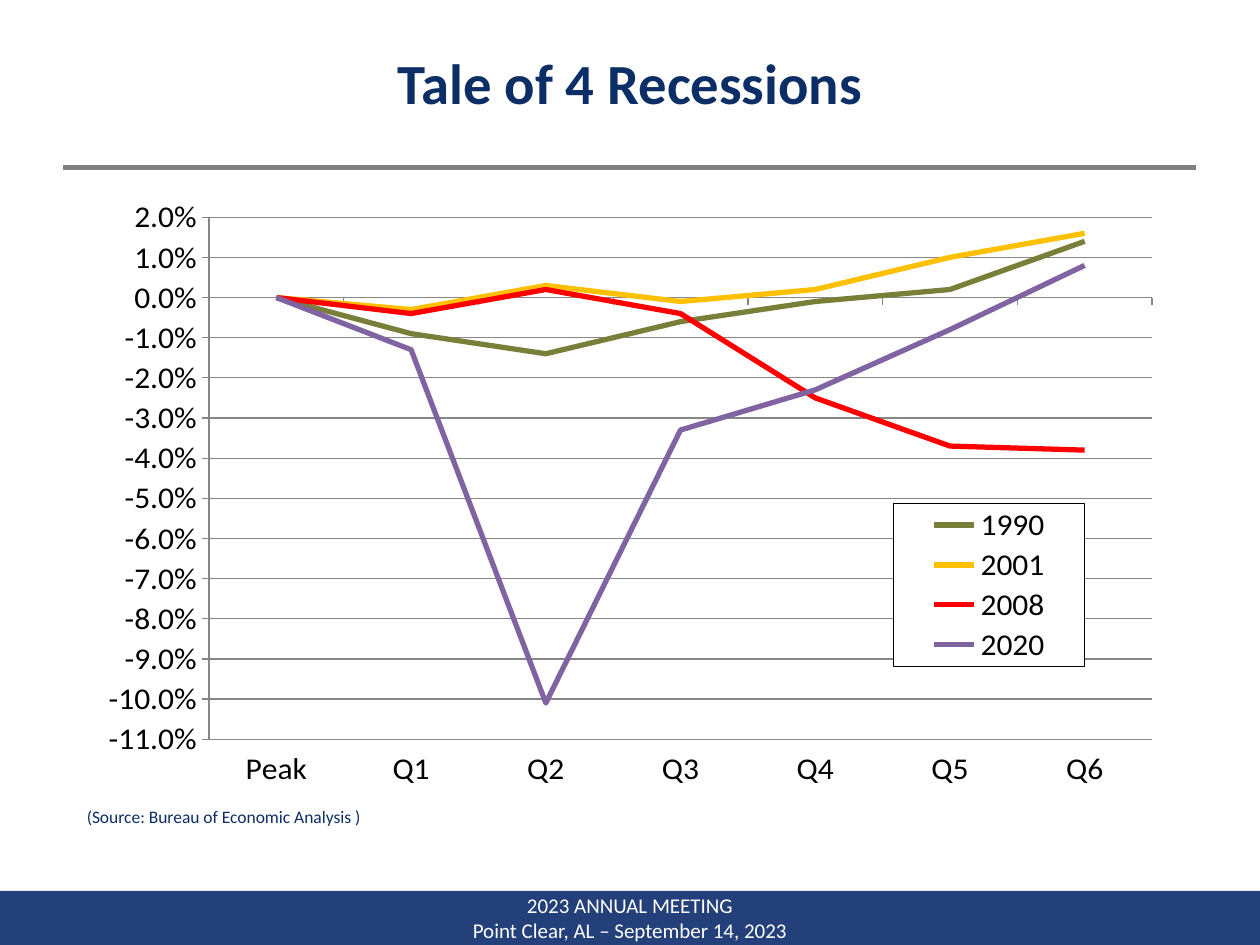
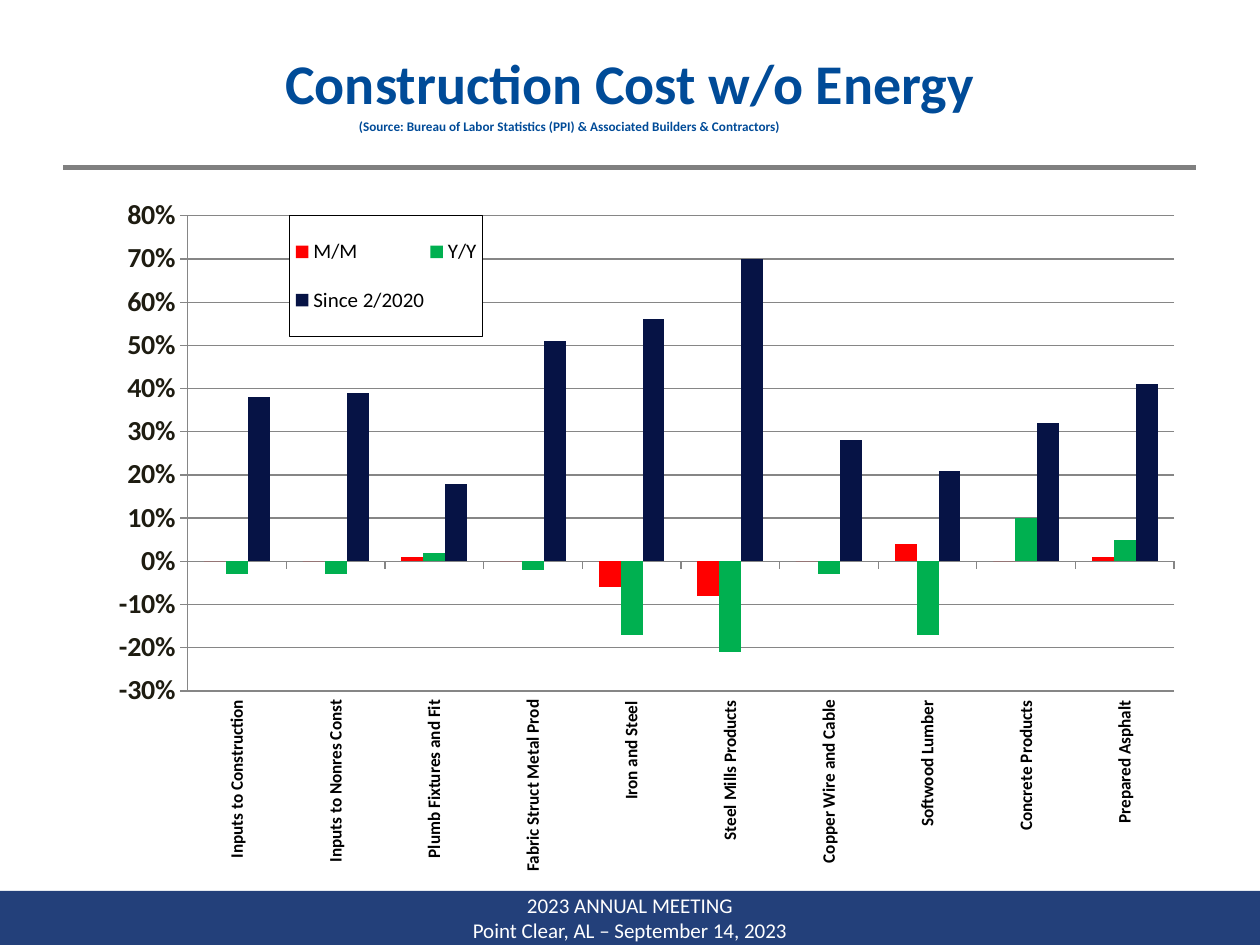
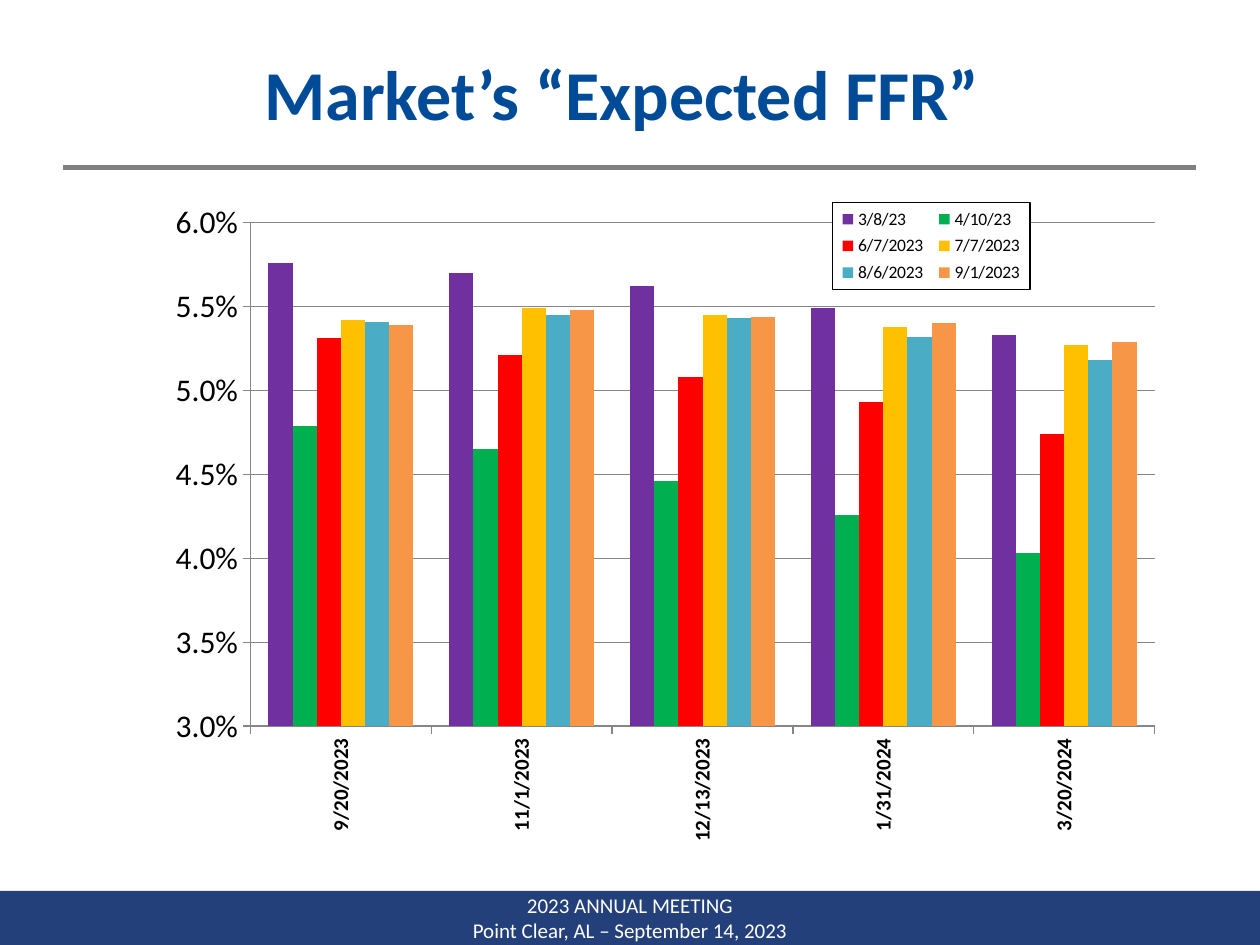
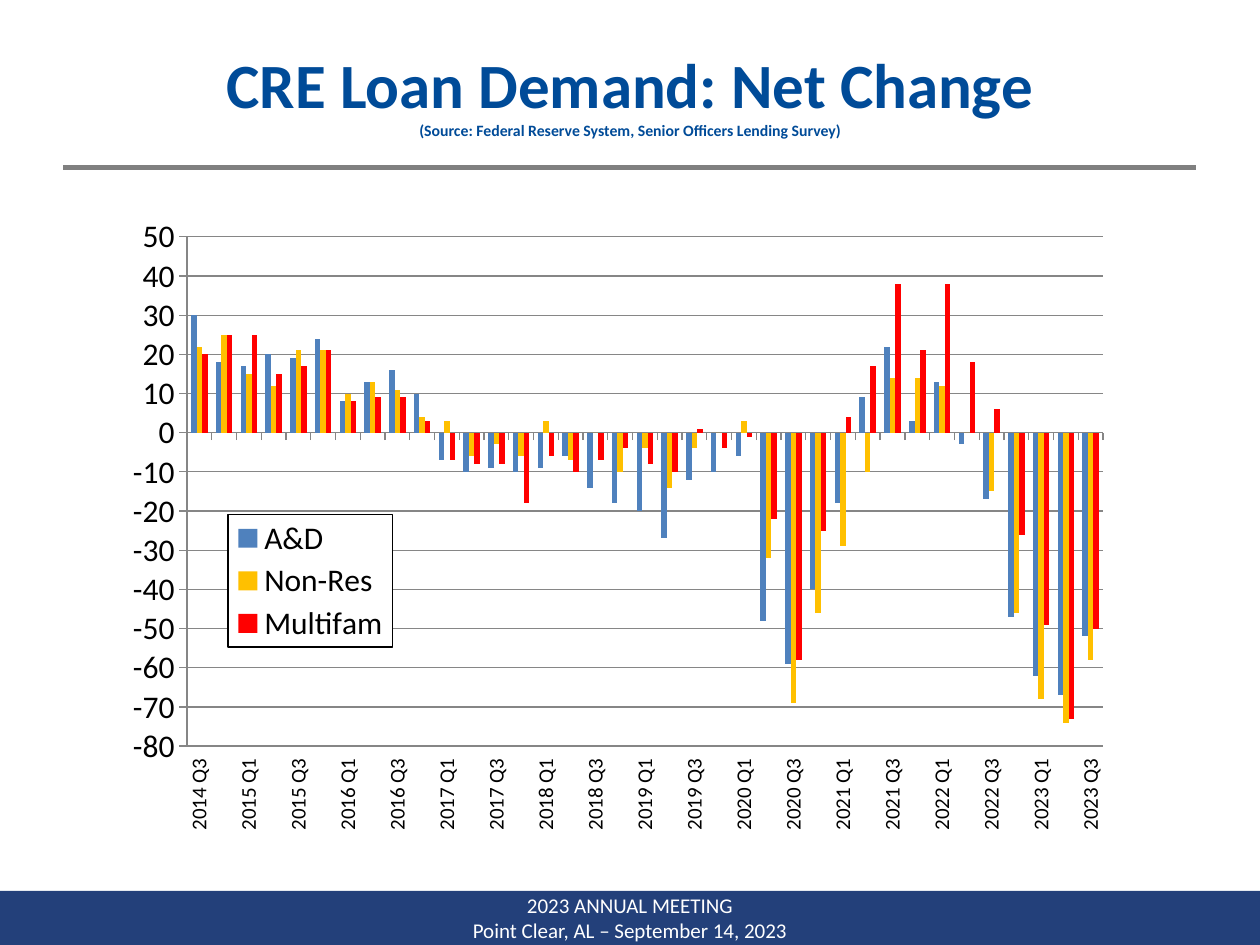
from lxml import etree
from pptx import Presentation
from pptx.chart.data import CategoryChartData
from pptx.dml.color import RGBColor
from pptx.enum import chart as ch, shapes, text
from pptx.oxml.ns import qn
from pptx.util import Inches, Pt

FONT = "Calibri"
BAND = RGBColor(0x23, 0x40, 0x7A)
NAVY = RGBColor(0x0B, 0x2E, 0x67)
BLUE = RGBColor(0x00, 0x4B, 0x98)
RULE = RGBColor(0x80, 0x80, 0x80)
GRID = RGBColor(0x86, 0x86, 0x86)
WHITE = RGBColor(0xFF, 0xFF, 0xFF)
BLACK = RGBColor(0x00, 0x00, 0x00)
BROWN = RGBColor(0x1E, 0x1C, 0x11)
OLIVE = RGBColor(0x79, 0x7F, 0x38)
GOLD = RGBColor(0xFF, 0xC0, 0x00)
RED = RGBColor(0xFF, 0x00, 0x00)
MAUVE = RGBColor(0x80, 0x64, 0xA2)
GREEN = RGBColor(0x00, 0xB0, 0x50)
MIDNIGHT = RGBColor(0x06, 0x13, 0x45)
PURPLE = RGBColor(0x70, 0x30, 0xA0)
TEAL = RGBColor(0x4B, 0xAC, 0xC6)
ORANGE = RGBColor(0xF7, 0x96, 0x46)
STEEL = RGBColor(0x4F, 0x81, 0xBD)

QUARTERS = [f"{year} Q{q}" for year in range(2014, 2024) for q in range(1, 5)][2:-1]

RECESSIONS = dict(
    box=(0.59, 1.58, 8.91, 4.67), kind=ch.XL_CHART_TYPE.LINE_MARKERS,
    plot=(0.12, 0.03, 0.84, 0.93), legend=(0.73, 0.54, 0.17, 0.29),
    scale=(-0.11, 0.02, 0.01), fmt="0.0%",
    cats=["Peak"] + [f"Q{q}" for q in range(1, 7)],
    series=[
        ("1990", OLIVE, [0, -0.009, -0.014, -0.006, -0.001, 0.002, 0.014]),
        ("2001", GOLD, [0, -0.003, 0.003, -0.001, 0.002, 0.01, 0.016]),
        ("2008", RED, [0, -0.004, 0.002, -0.004, -0.025, -0.037, -0.038]),
        ("2020", MAUVE, [0, -0.013, -0.101, -0.033, -0.023, -0.008, 0.008]),
    ])

COSTS = dict(
    box=(0.5, 1.5, 9, 5.42),
    plot=(0.11, 0.04, 0.87, 0.71), legend=(0.2, 0.04, 0.17, 0.18),
    scale=(-0.3, 0.8, 0.1), fmt="0%", upright=True,
    cat_font=dict(size=Pt(10), bold=True),
    val_font=dict(size=Pt(16), bold=True), val_color=BROWN,
    legend_size=12,
    cats=["Inputs to Construction", "Inputs to Nonres Const",
          "Plumb Fixtures and Fit", "Fabric Struct Metal Prod",
          "Iron and Steel", "Steel Mills Products", "Copper Wire and Cable",
          "Softwood Lumber", "Concrete Products", "Prepared Asphalt"],
    series=[
        ("M/M", RED, [0, 0, 0.01, 0, -0.06, -0.08, 0, 0.04, 0, 0.01]),
        ("Y/Y", GREEN, [-0.03, -0.03, 0.02, -0.02, -0.17, -0.21, -0.03,
                        -0.17, 0.1, 0.05]),
        ("Since 2/2020", MIDNIGHT, [0.38, 0.39, 0.18, 0.51, 0.56, 0.7, 0.28,
                                    0.21, 0.32, 0.41]),
    ])

FUNDS_RATE = dict(
    box=(1.08, 1.5, 8.25, 5.33),
    plot=(0.11, 0.05, 0.87, 0.75), legend=(0.67, 0.02, 0.19, 0.13),
    scale=(0.03, 0.06, 0.005), fmt="0.0%", upright=True,
    cat_font=dict(size=Pt(12), bold=True), legend_size=10,
    cats=["9/20/2023", "11/1/2023", "12/13/2023", "1/31/2024", "3/20/2024"],
    series=[
        ("3/8/23", PURPLE, [0.0576, 0.057, 0.0562, 0.0549, 0.0533]),
        ("4/10/23", GREEN, [0.0479, 0.0465, 0.0446, 0.0426, 0.0403]),
        ("6/7/2023", RED, [0.0531, 0.0521, 0.0508, 0.0493, 0.0474]),
        ("7/7/2023", GOLD, [0.0542, 0.0549, 0.0545, 0.0538, 0.0527]),
        ("8/6/2023", TEAL, [0.0541, 0.0545, 0.0543, 0.0532, 0.0518]),
        ("9/1/2023", ORANGE, [0.0539, 0.0548, 0.0544, 0.054, 0.0529]),
    ])

LOAN_DEMAND = dict(
    box=(0.83, 1.67, 8.17, 5.25),
    plot=(0.08, 0.04, 0.89, 0.77), legend=(0.12, 0.46, 0.16, 0.2),
    scale=(-80, 50, 10), fmt="General", upright=True, label_skip=2,
    cat_font=dict(size=Pt(12)),
    cats=QUARTERS,
    series=[
        ("A&D", STEEL, [
            30, 18, 17, 20, 19, 24, 8, 13, 16, 10, -7, -10, -9, -10, -9, -6,
            -14, -18, -20, -27, -12, -10, -6, -48, -59, -40, -18, 9, 22, 3,
            13, -3, -17, -47, -62, -67, -52]),
        ("Non-Res", GOLD, [
            22, 25, 15, 12, 21, 21, 10, 13, 11, 4, 3, -6, -3, -6, 3, -7, 0,
            -10, -4, -14, -4, 0, 3, -32, -69, -46, -29, -10, 14, 14, 12, 0,
            -15, -46, -68, -74, -58]),
        ("Multifam", RED, [
            20, 25, 25, 15, 17, 21, 8, 9, 9, 3, -7, -8, -8, -18, -6, -10, -7,
            -4, -8, -10, 1, -4, -1, -22, -58, -25, 4, 17, 38, 21, 38, 18, 6,
            -26, -49, -73, -50]),
    ])


def inches(*lengths):
    return [Inches(v) for v in lengths]


def style_font(font, color, **values):
    for name, value in {"name": FONT, **values}.items():
        setattr(font, name, value)
    font.color.rgb = color


def add_run(p, words, size, color, bold=False):
    r = p.add_run()
    r.text = words
    style_font(r.font, color, size=Pt(size), bold=bold)


def add_band_and_rule(slide, layout):
    """Draw the footer band and title rule, then hand them to the layout."""
    band = slide.shapes.add_shape(shapes.MSO_SHAPE.RECTANGLE,
                                  *inches(0, 7.07, 10, 0.43))
    band.shadow.inherit = False
    band.fill.solid()
    band.fill.fore_color.rgb = BAND
    band.line.fill.background()
    tf = band.text_frame
    tf.word_wrap = False
    tf.vertical_anchor = text.MSO_ANCHOR.MIDDLE
    lines = ("2023 ANNUAL MEETING", "Point Clear, AL – September 14, 2023")
    for i, words in enumerate(lines):
        p = tf.add_paragraph() if i else tf.paragraphs[0]
        p.alignment = text.PP_ALIGN.CENTER
        add_run(p, words, 12, WHITE)

    rule = slide.shapes.add_connector(shapes.MSO_CONNECTOR.STRAIGHT,
                                      *inches(0.5, 1.33, 9.49, 1.33))
    rule.line.color.rgb = RULE
    rule.line.width = Pt(3)
    etree.SubElement(rule._element.spPr, qn("a:effectLst"))

    for sp in (band, rule):
        layout.shapes._spTree.append(sp._element)


def set_title(slide, words, size, color=BLUE, height=0.87, bottom=0.05,
              source=None):
    title = slide.shapes.title
    title.left, title.top, title.width, title.height = inches(0.5, 0.3, 9, height)
    tf = title.text_frame
    tf.auto_size = text.MSO_AUTO_SIZE.NONE
    tf.vertical_anchor = text.MSO_ANCHOR.MIDDLE
    tf.margin_bottom = Inches(bottom)
    p = tf.paragraphs[0]
    p.alignment = text.PP_ALIGN.CENTER
    add_run(p, words, size, color, True)
    if source:
        p.add_line_break()
        add_run(p, source, 9, color, True)


def add_source(slide, box, words, size, color, bold=False, wrap=True):
    tf = slide.shapes.add_textbox(*inches(*box)).text_frame
    tf.word_wrap = wrap
    tf.auto_size = text.MSO_AUTO_SIZE.SHAPE_TO_FIT_TEXT
    add_run(tf.paragraphs[0], words, size, color, bold)


def set_layout(parent, index, box, inner=False):
    """Place a plot area or legend by fractions of the chart."""
    for old in parent.findall(qn("c:layout")):
        parent.remove(old)
    layout = etree.Element(qn("c:layout"))
    parent.insert(index, layout)
    manual = etree.SubElement(layout, qn("c:manualLayout"))
    values = [("layoutTarget", "inner")] if inner else []
    values += [("xMode", "edge"), ("yMode", "edge"), *zip("xywh", box)]
    for tag, value in values:
        etree.SubElement(manual, qn("c:" + tag)).set("val", str(value))


def style_legend(chart, box, size):
    chart.has_legend = True
    legend = chart.legend
    legend.position = ch.XL_LEGEND_POSITION.RIGHT
    legend.include_in_layout = False
    style_font(legend.font, BLACK, size=Pt(size))
    el = legend._element
    set_layout(el, 1, box)
    props = etree.Element(qn("c:spPr"))
    el.find(qn("c:overlay")).addnext(props)
    line = etree.Element(qn("a:ln"), w=str(Pt(0.75)))
    for parent, color in ((props, WHITE), (line, BLACK)):
        fill = etree.SubElement(parent, qn("a:solidFill"))
        etree.SubElement(fill, qn("a:srgbClr")).set("val", str(color))
    props.append(line)


def style_axes(chart, spec):
    cat, val = chart.category_axis, chart.value_axis
    style_font(cat.tick_labels.font, BLACK,
               **spec.get("cat_font", dict(size=Pt(18))))
    style_font(val.tick_labels.font, spec.get("val_color", BLACK),
               **spec.get("val_font", dict(size=Pt(18))))
    val.minimum_scale, val.maximum_scale, val.major_unit = spec["scale"]
    val.tick_labels.number_format = spec["fmt"]
    val.tick_labels.number_format_is_linked = False
    val.has_major_gridlines = True
    cat.tick_label_position = ch.XL_TICK_LABEL_POSITION.LOW
    for axis in (cat, val):
        axis.major_tick_mark = ch.XL_TICK_MARK.OUTSIDE
        axis.minor_tick_mark = ch.XL_TICK_MARK.NONE
    for part in (cat, val, val.major_gridlines):
        part.format.line.color.rgb = GRID
        part.format.line.width = Pt(0.75)
    if spec.get("upright"):
        body = cat._element.find(qn("c:txPr")).find(qn("a:bodyPr"))
        body.set("rot", "-5400000")
        body.set("vert", "horz")
    if "label_skip" in spec:
        skip = etree.Element(qn("c:tickLblSkip"), val=str(spec["label_skip"]))
        cat._element.find(qn("c:noMultiLvlLbl")).addprevious(skip)


def add_data_chart(slide, spec):
    data = CategoryChartData(number_format=spec["fmt"])
    data.categories = spec["cats"]
    for name, _, values in spec["series"]:
        data.add_series(name, values)
    kind = spec.get("kind", ch.XL_CHART_TYPE.COLUMN_CLUSTERED)
    chart = slide.shapes.add_chart(kind, *inches(*spec["box"]), data).chart
    chart.has_title = False
    style_font(chart.font, BLACK, size=Pt(18))
    plot = chart.plots[0]
    plot.vary_by_categories = False
    is_line = kind == ch.XL_CHART_TYPE.LINE_MARKERS
    if not is_line:
        plot.gap_width = 150
    for series, (_, color, _) in zip(plot.series, spec["series"]):
        if is_line:
            series.smooth = False
            series.marker.style = ch.XL_MARKER_STYLE.NONE
            series.format.line.color.rgb = color
            series.format.line.width = Pt(3)
        else:
            series.format.fill.solid()
            series.format.fill.fore_color.rgb = color
    style_axes(chart, spec)
    style_legend(chart, spec["legend"], spec.get("legend_size", 18))
    plot_area = chart._chartSpace.chart.plotArea
    set_layout(plot_area, 0, spec["plot"], inner=True)


def main():
    prs = Presentation()
    prs.slide_width, prs.slide_height = inches(10, 7.5)
    title_only = prs.slide_layouts[5]
    recessions, costs, funds_rate, loans = [
        prs.slides.add_slide(title_only) for _ in range(4)]
    add_band_and_rule(recessions, title_only)

    set_title(recessions, "Tale of 4 Recessions", 32.4, NAVY, bottom=0.22)
    add_data_chart(recessions, RECESSIONS)
    add_source(recessions, (0.59, 6.35, 2.58, 0.27),
               "(Source: Bureau of Economic Analysis )", 10, NAVY, wrap=False)

    set_title(costs, "Construction Cost w/o Energy", 32, height=0.7)
    add_data_chart(costs, COSTS)
    add_source(costs, (2.75, 0.89, 4.75, 0.23),
               "(Source: Bureau of Labor Statistics (PPI) & "
               "Associated Builders & Contractors)", 7.5, BLUE, bold=True)

    set_title(funds_rate, "Market’s “Expected FFR” ", 40)
    add_data_chart(funds_rate, FUNDS_RATE)

    set_title(loans, "CRE Loan Demand: Net Change", 36,
              source="(Source: Federal Reserve System, "
                     "Senior Officers Lending Survey)")
    add_data_chart(loans, LOAN_DEMAND)

    prs.save("out.pptx")


if __name__ == "__main__":
    main()
